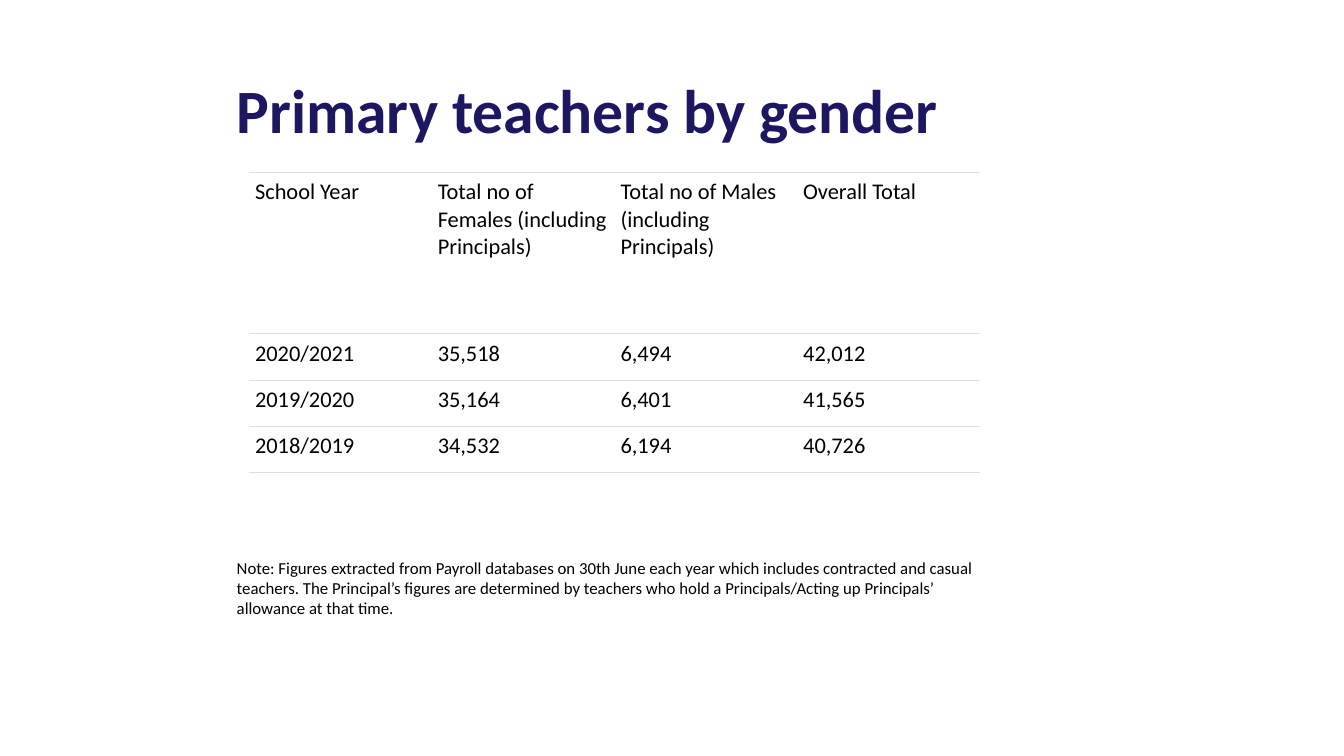
from lxml import etree
from pptx import Presentation
from pptx import util as u
from pptx.dml.color import RGBColor
from pptx.enum import text
from pptx.oxml import ns

FONT = "Calibri"
COLORS = {"title": "1D1762", "body": "000000", "rule": "DDDDDD"}
TITLE = "Primary teachers by gender"
ROWS = [
    ("School Year", "Total no of Females (including Principals)",
     "Total no of Males (including Principals)", "Overall Total"),
    ("2020/2021", "35,518", "6,494", "42,012"),
    ("2019/2020", "35,164", "6,401", "41,565"),
    ("2018/2019", "34,532", "6,194", "40,726"),
]
NOTE = ("Note: Figures extracted from Payroll databases on 30th June each year which "
        "includes contracted and casual teachers. The Principal’s figures are determined "
        "by teachers who hold a Principals/Acting up Principals’ allowance at that time.")


def style_text(tf, size, color, bold=False):
    """Format every run of a text frame."""
    for p in tf.paragraphs:
        for r in p.runs:
            r.font.name = FONT
            r.font.size = u.Pt(size)
            r.font.bold = bold
            r.font.color.rgb = RGBColor.from_string(COLORS[color])


def add_text(s, box, words, size, color, bold=False, anchor=text.MSO_ANCHOR.TOP):
    """Place a wrapped text box and return its text frame."""
    tf = s.shapes.add_textbox(*map(u.Inches, box)).text_frame
    tf.word_wrap = True
    tf.vertical_anchor = anchor
    tf.text = words
    style_text(tf, size, color, bold)
    return tf


def set_borders(cell):
    """Rule a cell above and below and leave its sides open."""
    tcPr = cell._tc.get_or_add_tcPr()
    for i, side in enumerate(("lnL", "lnR", "lnT", "lnB")):
        ln = etree.Element(ns.qn(f"a:{side}"), w=str(u.Pt(0.6)))
        if side in ("lnT", "lnB"):
            fill = etree.SubElement(ln, ns.qn("a:solidFill"))
            etree.SubElement(fill, ns.qn("a:srgbClr"), val=COLORS["rule"])
        else:
            etree.SubElement(ln, ns.qn("a:noFill"))
        tcPr.insert(i, ln)


def add_title(s, box):
    """Place the slide title."""
    tf = add_text(s, box, TITLE, 44, "title", True, text.MSO_ANCHOR.MIDDLE)
    tf.paragraphs[0].line_spacing = 0.9


def add_teacher_table(s, box, header_height):
    """Place the table of teachers with equal columns and equal data rows."""
    n_rows, n_cols = len(ROWS), len(ROWS[0])
    left, top, width, height = box
    table = s.shapes.add_table(n_rows, n_cols, *map(u.Inches, box)).table
    table.first_row = False
    table.horz_banding = False
    for col in table.columns:
        col.width = u.Inches(width / n_cols)
    for i, row in enumerate(table.rows):
        row.height = u.Inches((height - header_height) / (n_rows - 1) if i else header_height)
        for cell, words in zip(row.cells, ROWS[i]):
            cell.text = words
            cell.margin_left = cell.margin_right = u.Inches(0.06)
            cell.margin_top = cell.margin_bottom = u.Inches(0.06)
            cell.fill.background()
            set_borders(cell)
            style_text(cell.text_frame, 16, "body")


def add_note(s, box):
    """Place the note below the table."""
    tf = add_text(s, box, NOTE, 12, "body")
    tf.auto_size = text.MSO_AUTO_SIZE.SHAPE_TO_FIT_TEXT


def main():
    """Build and save the slide."""
    prs = Presentation()
    prs.slide_width, prs.slide_height = u.Inches(13.33), u.Inches(7.5)
    s = prs.slides.add_slide(prs.slide_layouts[6])
    add_title(s, (2.25, 0.4, 10.17, 1.45))
    add_teacher_table(s, (2.47, 1.71, 7.25, 2.98), 1.6)
    add_note(s, (2.25, 5.48, 7.8, 0.71))
    prs.save("out.pptx")


if __name__ == "__main__":
    main()
